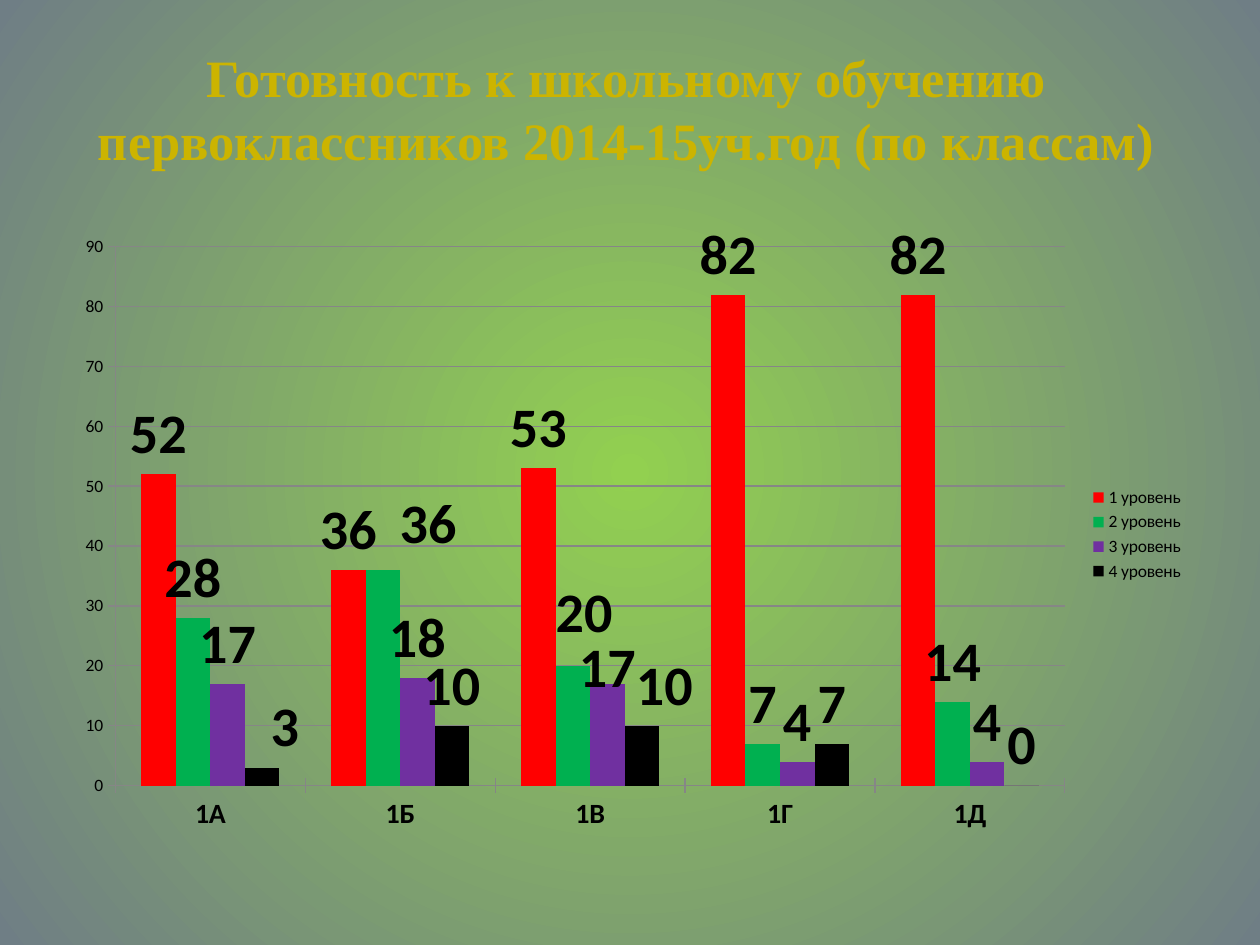
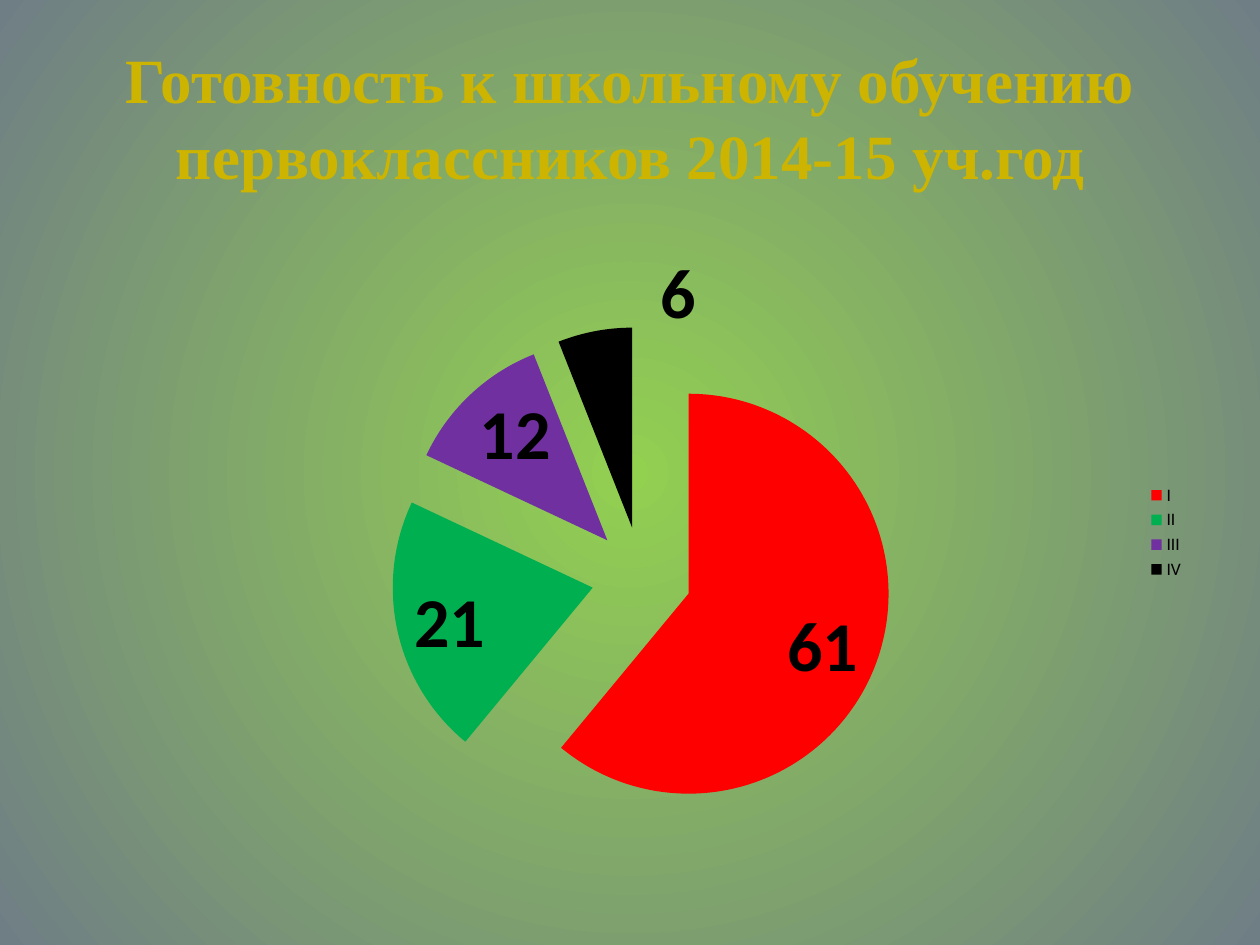
"""Two slides on how ready first graders are for school: by class and overall."""
from lxml import etree
from pptx import Presentation
from pptx import util as u
from pptx.chart import data as cd
from pptx.dml import color
from pptx.enum import chart as ec, text
from pptx.oxml import parse_xml
from pptx.oxml.ns import nsdecls, qn

RED, GREEN, VIOLET, BLACK = HUES = ["FF0000", "00B050", "7030A0", "000000"]
GOLD, GRAY = "CCB400", "868686"
GLOW = ["92D050", "6F7E85"]
BOX = (0.5, 1.75, 9, 4.95)
HEAD = "Готовность к школьному обучению первоклассников "

SLIDES = [
    {
        "title": HEAD + "2014-15уч.год (по классам)",
        "at": (0.47, 0.23, 9, 1.25), "size": 30,
        "kind": ec.XL_CHART_TYPE.COLUMN_CLUSTERED,
        "cats": ["1А", "1Б", "1В", "1Г", "1Д"],
        "rows": [
            ("1 уровень", [52, 36, 53, 82, 82]),
            ("2 уровень", [28, 36, 20, 7, 14]),
            ("3 уровень", [17, 18, 17, 4, 4]),
            ("4 уровень", [3, 10, 10, 7, 0]),
        ],
        "label": 32,
        "moves": {(1, 1): (0.04, -0.01), (1, 2): (0.01, -0.02),
                  (2, 2): (0, 0.04), (3, 0): (0.02, 0), (3, 2): (0.02, 0)},
    },
    {
        "title": HEAD + "2014-15 уч.год",
        "at": (0.5, 0.3, 9, 1.25), "size": 36,
        "kind": ec.XL_CHART_TYPE.PIE,
        "cats": ["I", "II", "III", "IV"],
        "rows": [("Series 1", [61, 21, 12, 6])],
        "label": 40,
        "moves": {(0, 3): (0.09, 0.02)},
    },
]


def rgb(code):
    """Turn a hex string into a colour."""
    return color.RGBColor.from_string(code)


def put(obj, **vals):
    """Set each named value on an object."""
    for name, val in vals.items():
        setattr(obj, name, val)


def paint(fill, code):
    """Give a fill one solid colour."""
    fill.solid()
    fill.fore_color.rgb = rgb(code)


def glow(slide):
    """Lay a round gradient behind the slide."""
    fill = slide.background.fill
    fill.gradient()
    for stop, code, pos in zip(fill.gradient_stops, GLOW, (0, 1)):
        stop.color.rgb = rgb(code)
        stop.position = pos
    grad = next(slide.background._cSld.iter(qn("a:gradFill")))
    for lin in grad.findall(qn("a:lin")):
        grad.remove(lin)
    grad.append(parse_xml(
        f'<a:path {nsdecls("a")} path="circle"><a:fillToRect '
        'l="50000" t="50000" r="50000" b="50000"/></a:path>'))


def head(slide, item):
    """Place and format the title."""
    box = slide.shapes.title
    sides = map(u.Inches, item["at"])
    put(box, **dict(zip(("left", "top", "width", "height"), sides)))
    frame = box.text_frame
    put(frame, text=item["title"], word_wrap=True,
        vertical_anchor=text.MSO_ANCHOR.MIDDLE)
    par = frame.paragraphs[0]
    par.alignment = text.PP_ALIGN.CENTER
    font = par.runs[0].font
    put(font, size=u.Pt(item["size"]), name="Times New Roman", bold=True)
    font.color.rgb = rgb(GOLD)


def shift(row, spot, move, look):
    """Move one data label by a share of the chart's size."""
    put(row.points[spot].data_label.font, **look)
    for tag in row.data_labels._element.findall(qn("c:dLbl")):
        idx = tag.find(qn("c:idx"))
        if idx.get("val") == str(spot):
            idx.addnext(parse_xml(
                f'<c:layout {nsdecls("c")}><c:manualLayout>'
                f'<c:x val="{move[0]}"/><c:y val="{move[1]}"/>'
                '</c:manualLayout></c:layout>'))


def mark(plot, item):
    """Show the values as bold labels."""
    look = {"size": u.Pt(item["label"]), "bold": True}
    for num, row in enumerate(plot.series):
        tags = row.data_labels
        put(tags, show_value=True, show_percentage=False)
        put(tags.font, **look)
        for (ser, spot), move in item["moves"].items():
            if ser == num:
                shift(row, spot, move, look)
        for lead in tags._element.findall(qn("c:showLeaderLines")):
            lead.set("val", "0")


def bars(chart):
    """Format the columns and their axes."""
    plot = chart.plots[0]
    put(plot, gap_width=150, overlap=0)
    for row, code in zip(plot.series, HUES):
        paint(row.format.fill, code)
    cat, val = chart.category_axis, chart.value_axis
    put(cat.tick_labels.font, size=u.Pt(16), bold=True)
    put(val, has_major_gridlines=True, minimum_scale=0, maximum_scale=90,
        major_unit=10)
    for axis in (cat, val):
        axis.major_tick_mark = ec.XL_TICK_MARK.CROSS
    for part in (cat, val, val.major_gridlines):
        line = part.format.line
        line.width = u.Pt(0.75)
        line.color.rgb = rgb(GRAY)


def slices(chart):
    """Colour the slices and pull them apart."""
    row = chart.plots[0].series[0]
    for spot, code in enumerate(HUES):
        paint(row.points[spot].format.fill, code)
    gap = etree.Element(qn("c:explosion"), val="25")
    row._element.find(qn("c:dPt")).addprevious(gap)


def graph(slide, item):
    """Add the chart with its legend."""
    data = cd.CategoryChartData()
    data.categories = item["cats"]
    for name, vals in item["rows"]:
        data.add_series(name, vals)
    chart = slide.shapes.add_chart(
        item["kind"], *map(u.Inches, BOX), data).chart
    put(chart, has_title=False, has_legend=True)
    put(chart.font, size=u.Pt(10), name="Calibri")
    chart.font.color.rgb = rgb(BLACK)
    put(chart.legend, position=ec.XL_LEGEND_POSITION.RIGHT,
        include_in_layout=False)
    pie = item["kind"] == ec.XL_CHART_TYPE.PIE
    chart.plots[0].vary_by_categories = pie
    (slices if pie else bars)(chart)
    mark(chart.plots[0], item)


def main():
    """Build and save the slides."""
    deck = Presentation()
    put(deck, slide_width=u.Inches(10), slide_height=u.Inches(7.5))
    for item in SLIDES:
        slide = deck.slides.add_slide(deck.slide_layouts[5])
        glow(slide)
        head(slide, item)
        graph(slide, item)
    deck.save("out.pptx")


if __name__ == "__main__":
    main()
